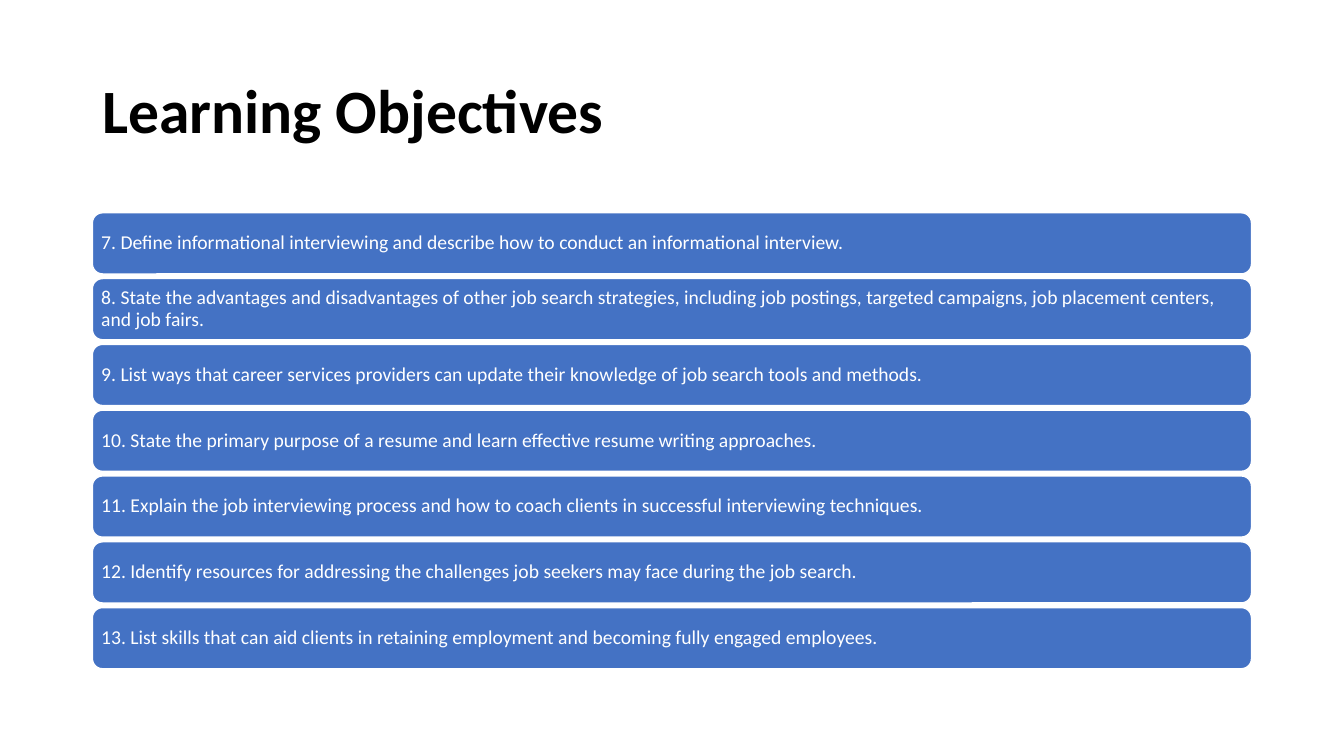
from pptx import Presentation
from pptx.dml.color import RGBColor
from pptx.enum.shapes import MSO_SHAPE
from pptx.enum.text import MSO_ANCHOR, MSO_AUTO_SIZE, PP_ALIGN
from pptx.util import Pt

ROUNDED = MSO_SHAPE.ROUNDED_RECTANGLE
MIDDLE = MSO_ANCHOR.MIDDLE
LEFT = PP_ALIGN.LEFT
NO_AUTOFIT = MSO_AUTO_SIZE.NONE

COLOURS = {"title": "000000", "bar": "4472C4", "white": "FFFFFF"}
FONT = "Calibri"
MARGIN, CONTENT_WIDTH = 66, 828
BAR_TOP, BAR_HEIGHT, BAR_PITCH, BAR_INSET = 152, 43.7, 47, 4.2

OBJECTIVES = [
    "7. Define informational interviewing and describe how to conduct an informational interview.",
    "8. State the advantages and disadvantages of other job search strategies, including "
    "job postings, targeted campaigns, job placement centers, and job fairs.",
    "9. List ways that career services providers can update their knowledge of job search tools and methods.",
    "10. State the primary purpose of a resume and learn effective resume writing approaches.",
    "11. Explain the job interviewing process and how to coach clients in successful interviewing techniques.",
    "12. Identify resources for addressing the challenges job seekers may face during the job search.",
    "13. List skills that can aid clients in retaining employment and becoming fully engaged employees.",
]


def colour(name):
    return RGBColor.from_string(COLOURS[name])


def write(frame, text, size, colour_name, bold=False):
    frame.word_wrap = True
    frame.auto_size = NO_AUTOFIT
    frame.vertical_anchor = MIDDLE
    para = frame.paragraphs[0]
    para.alignment = LEFT
    para.line_spacing = 0.9
    span = para.add_run()
    span.text = text
    span.font.name = FONT
    span.font.size = Pt(size)
    span.font.bold = bold
    span.font.color.rgb = colour(colour_name)


deck = Presentation()
deck.slide_width = Pt(960)
deck.slide_height = Pt(540)
slide = deck.slides.add_slide(deck.slide_layouts[5])
slide.background.fill.solid()
slide.background.fill.fore_color.rgb = colour("white")

# Title
title = slide.shapes.title
title.left, title.top = Pt(MARGIN), Pt(28.75)
title.width, title.height = Pt(CONTENT_WIDTH), Pt(104.4)
write(title.text_frame, "Learning Objectives", 44, "title", bold=True)

# Stacked objective bars
for index, objective in enumerate(OBJECTIVES):
    bar = slide.shapes.add_shape(
        ROUNDED, Pt(MARGIN), Pt(BAR_TOP + index * BAR_PITCH), Pt(CONTENT_WIDTH), Pt(BAR_HEIGHT)
    )
    bar.shadow.inherit = False
    bar.fill.solid()
    bar.fill.fore_color.rgb = colour("bar")
    bar.line.color.rgb = colour("white")
    bar.line.width = Pt(1)
    frame = bar.text_frame
    frame.margin_left = frame.margin_right = Pt(BAR_INSET)
    frame.margin_top = frame.margin_bottom = Pt(BAR_INSET)
    write(frame, objective, 14, "white")

deck.save("out.pptx")
